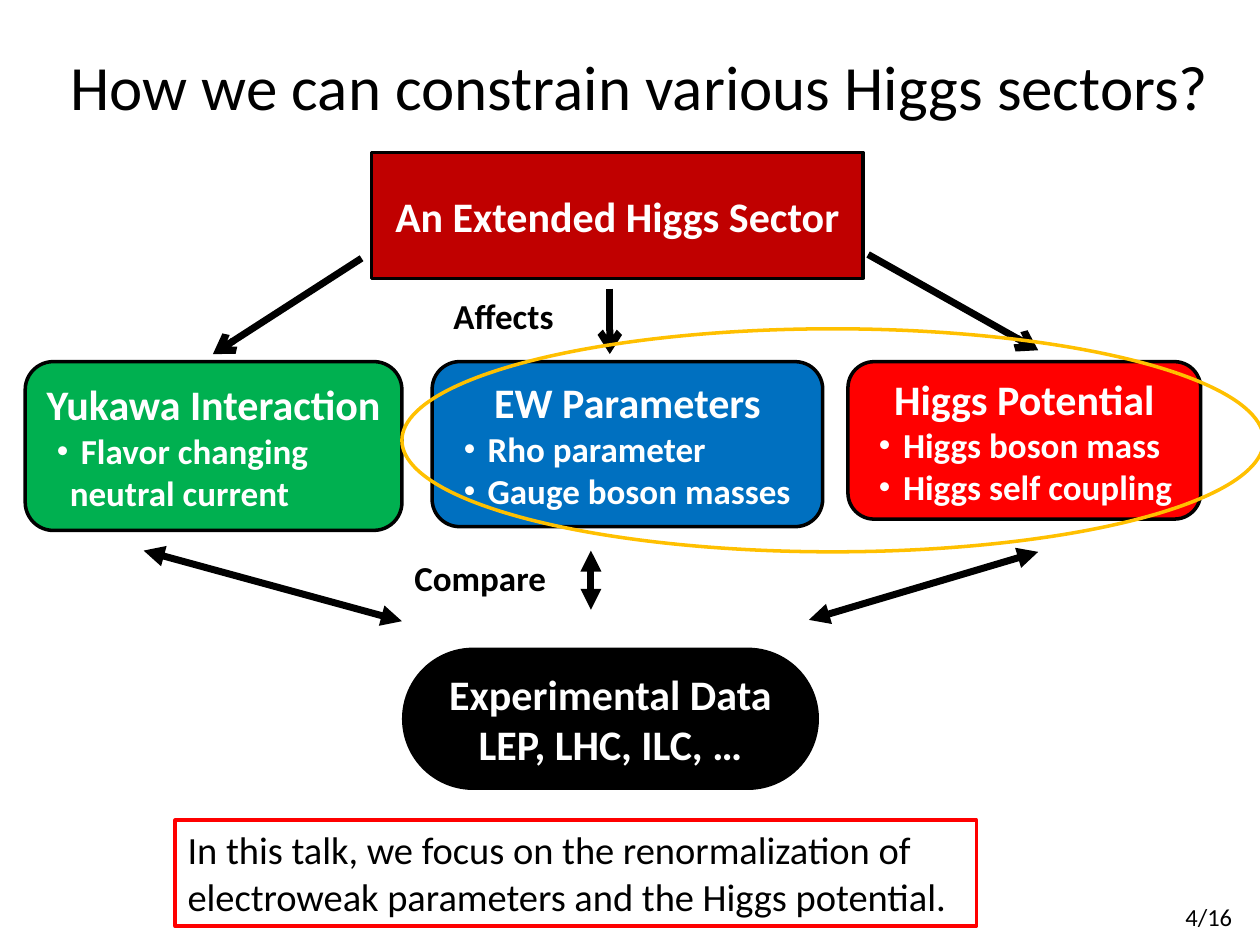
import pptx
import pptx.util
import pptx.dml.color
import pptx.enum.shapes
import pptx.enum.text
import pptx.oxml
import pptx.oxml.ns

Inches = pptx.util.Inches
Pt = pptx.util.Pt
RGBColor = pptx.dml.color.RGBColor
SHAPE = pptx.enum.shapes.MSO_SHAPE
ALIGN = pptx.enum.text.PP_ALIGN
ANCHOR = pptx.enum.text.MSO_ANCHOR

BLACK = RGBColor(0, 0, 0)
WHITE = RGBColor(255, 255, 255)
DARK_RED = RGBColor(0xC0, 0, 0)
RED = RGBColor(0xFF, 0, 0)
GREEN = RGBColor(0, 0xB0, 0x50)
BLUE = RGBColor(0, 0x70, 0xC0)
AMBER = RGBColor(0xFF, 0xC0, 0)


def write_lines(frame, lines, size, color, bold=False, align=ALIGN.LEFT):
    frame.text = "\n".join(lines)
    for paragraph in frame.paragraphs:
        paragraph.alignment = align
        for run in paragraph.runs:
            run.font.name = "Calibri"
            run.font.size = Pt(size)
            run.font.bold = bold
            run.font.color.rgb = color


def add_label(slide, box, lines, size, bold=False, wrap=False):
    label = slide.shapes.add_textbox(*map(Inches, box))
    label.text_frame.word_wrap = wrap
    write_lines(label.text_frame, lines, size, BLACK, bold)
    return label


def add_block(slide, kind, box, fill=None, line=None):
    block = slide.shapes.add_shape(kind, *map(Inches, box))
    block.shadow.inherit = False
    if fill is None:
        block.fill.background()
    else:
        block.fill.solid()
        block.fill.fore_color.rgb = fill
    if line is None:
        block.line.fill.background()
    else:
        block.line.color.rgb = line
        block.line.width = Pt(2)
    block.text_frame.word_wrap = True
    block.text_frame.vertical_anchor = ANCHOR.MIDDLE
    return block


def add_title(slide, box):
    title = add_label(slide, box, ["How we can constrain various Higgs sectors?"], 36, wrap=True)
    title.text_frame.vertical_anchor = ANCHOR.MIDDLE
    title.text_frame.paragraphs[0].alignment = ALIGN.CENTER


def add_hub(slide, kind, box, lines, fill, line=None):
    hub = add_block(slide, kind, box, fill, line)
    write_lines(hub.text_frame, lines, 24, WHITE, True, ALIGN.CENTER)
    return hub


def add_sector(slide, box, heading, details, fill):
    """Rounded box with a centred heading and smaller details below."""
    sector = add_block(slide, SHAPE.ROUNDED_RECTANGLE, box, fill, BLACK)
    frame = sector.text_frame
    write_lines(frame, [heading] + details, 20, WHITE, True)
    frame.paragraphs[0].alignment = ALIGN.CENTER
    frame.paragraphs[0].runs[0].font.size = Pt(24)
    for paragraph in frame.paragraphs[1:]:
        if not paragraph.text.startswith("・"):
            # Continuation line, set under the text of the item above
            paragraph_format = paragraph._p.get_or_add_pPr()
            paragraph_format.set("marL", str(Inches(0.19)))
            paragraph_format.set("indent", "0")


def add_arrow(slide, start, end, tail, head=None):
    points = map(Inches, start + end)
    arrow = slide.shapes.add_connector(pptx.enum.shapes.MSO_CONNECTOR.STRAIGHT, *points)
    arrow.line.color.rgb = BLACK
    arrow.line.width = Pt(4)
    outline = arrow.line._get_or_add_ln()
    for tag, style in (("a:headEnd", head), ("a:tailEnd", tail)):
        if style:
            end_mark = pptx.oxml.parse_xml(
                f'<{tag} {pptx.oxml.ns.nsdecls("a")} type="{style}"/>')
            outline.append(end_mark)
    arrow._element.spPr.append(
        pptx.oxml.parse_xml(f'<a:effectLst {pptx.oxml.ns.nsdecls("a")}/>'))


def add_focus_note(slide, box):
    note = add_label(slide, box, [
        "In this talk, we focus on the renormalization of",
        "electroweak parameters and the Higgs potential.",
    ], 22)
    note.line.color.rgb = RED
    note.line.width = Pt(2)


def main():
    deck = pptx.Presentation()
    deck.slide_width, deck.slide_height = Inches(10), Inches(7.5)
    slide = deck.slides.add_slide(deck.slide_layouts[6])

    add_title(slide, (0.35, 0.05, 9.45, 1.25))

    # Theory and experiment
    add_hub(slide, SHAPE.RECTANGLE, (2.95, 1.21, 3.9, 1),
            ["An Extended Higgs Sector"], DARK_RED, BLACK)
    data = add_hub(slide, SHAPE.ROUNDED_RECTANGLE, (3.19, 5.14, 3.31, 1.13),
                   ["Experimental Data", "LEP, LHC, ILC, …"], BLACK)
    data.adjustments[0] = 0.5

    # Theory affects the sectors
    for start, end in (((2.87, 2.05), (1.69, 2.81)),
                       ((4.84, 2.29), (4.84, 2.81)),
                       ((6.89, 2.02), (8.24, 2.78))):
        add_arrow(slide, start, end, "arrow")
    add_label(slide, (3.5, 2.29, 1.01, 0.44), ["Affects"], 20, True)

    # Sectors are compared with data
    for start, end in (((3.19, 4.93), (1.14, 4.37)),
                       ((4.69, 4.84), (4.69, 4.37)),
                       ((8.24, 4.38), (6.42, 4.92))):
        add_arrow(slide, start, end, "triangle", "triangle")
    add_label(slide, (3.19, 4.37, 1.26, 0.44), ["Compare"], 20, True)

    # Three affected sectors
    top = 2.87
    for left, width, height, heading, details, fill in (
        (0.2, 2.99, 1.34, "Yukawa Interaction",
         ["・Flavor changing", "neutral current"], GREEN),
        (3.43, 3.1, 1.31, "EW Parameters",
         ["・Rho parameter", "・Gauge boson masses"], BLUE),
        (6.73, 2.8, 1.25, "Higgs Potential",
         ["・Higgs boson mass", "・Higgs self coupling"], RED),
    ):
        add_sector(slide, (left, top, width, height), heading, details, fill)

    # Focus of the talk
    add_block(slide, SHAPE.OVAL, (3.19, 2.61, 6.84, 1.77), line=AMBER)
    add_focus_note(slide, (1.39, 6.51, 6.36, 0.84))

    add_label(slide, (9.31, 7.11, 0.58, 0.34), ["4/16"], 14)
    deck.save("out.pptx")


if __name__ == "__main__":
    main()
